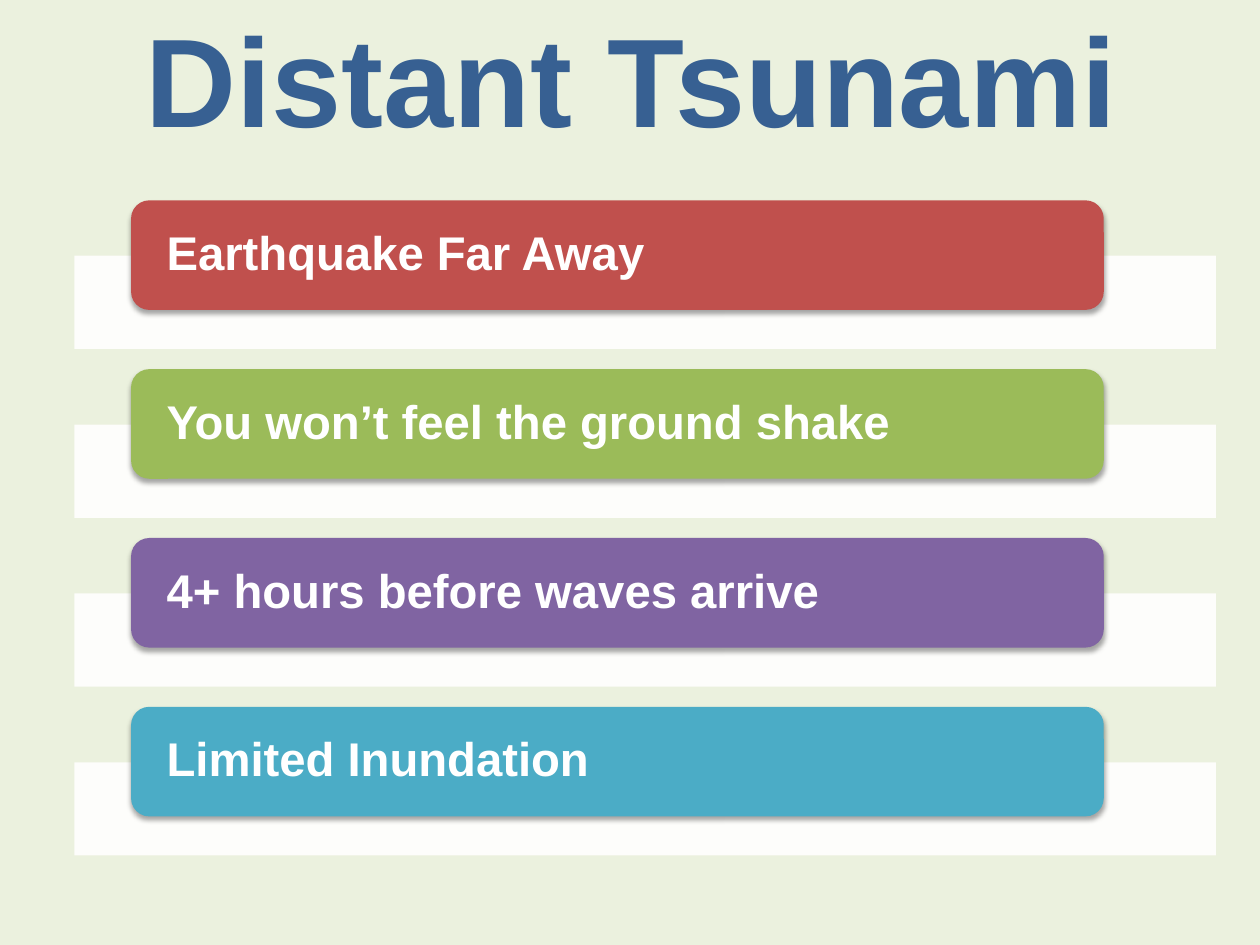
from lxml.etree import SubElement
from pptx import Presentation
from pptx.dml.color import RGBColor
from pptx.enum.shapes import MSO_SHAPE
from pptx.enum.text import MSO_ANCHOR, PP_ALIGN
from pptx.oxml.ns import qn
from pptx.util import Inches, Pt

COLORS = {
    "back": "EBF1DE", "title": "376092", "white": "FFFFFF", "shade": "000000",
    "red": "C0504D", "green": "9BBB59", "purple": "8064A2", "blue": "4BACC6",
}
FACTS = [
    ("Earthquake Far Away", "red"),
    ("You won’t feel the ground shake", "green"),
    ("4+ hours before waves arrive", "purple"),
    ("Limited Inundation", "blue"),
]


def color(name):
    return RGBColor.from_string(COLORS[name])


def set_font(para, size, name):
    font = para.font
    font.name, font.size, font.bold = "Arial", Pt(size), True
    font.color.rgb = color(name)


def set_alpha(node, percent):
    SubElement(node, qn("a:alpha"), val=str(percent * 1000))


def add_shadow(shape):
    effects = shape._element.spPr.find(qn("a:effectLst"))
    shadow = SubElement(effects, qn("a:outerShdw"), blurRad=str(Pt(3.1)),
                        dist=str(Pt(1.8)), dir="5400000", rotWithShape="0")
    set_alpha(SubElement(shadow, qn("a:srgbClr"), val=COLORS["shade"]), 35)


def add_block(slide, kind, left, top, width, height, fill):
    shape = slide.shapes.add_shape(
        kind, Inches(left), Inches(top), Inches(width), Inches(height))
    shape.fill.solid()
    shape.fill.fore_color.rgb = color(fill)
    shape.line.fill.background()
    shape.shadow.inherit = False
    return shape


def add_title(slide, left, top, width, height):
    title = slide.shapes.title
    title.left, title.top = Inches(left), Inches(top)
    title.width, title.height = Inches(width), Inches(height)
    frame = title.text_frame
    frame.text = "Distant Tsunami"
    frame.vertical_anchor = MSO_ANCHOR.MIDDLE
    para = frame.paragraphs[0]
    para.alignment = PP_ALIGN.CENTER
    set_font(para, 72, "title")


def add_fact(slide, left, top, width, text, fill):
    band = add_block(slide, MSO_SHAPE.RECTANGLE,
                     left, top + 0.44, width, 0.74, "white")
    set_alpha(band._element.spPr.find(".//" + qn("a:srgbClr")), 90)

    bar = add_block(slide, MSO_SHAPE.ROUNDED_RECTANGLE,
                    left + 0.45, top, width - 1.34, 0.87, fill)
    add_shadow(bar)
    frame = bar.text_frame
    frame.text = text
    frame.word_wrap = True
    frame.vertical_anchor = MSO_ANCHOR.MIDDLE
    frame.margin_left = frame.margin_right = Inches(0.24)
    frame.margin_top = frame.margin_bottom = 0
    para = frame.paragraphs[0]
    para.alignment = PP_ALIGN.LEFT
    para.line_spacing = 0.9
    set_font(para, 27, "white")


def add_facts(slide, left, top, width, step):
    for row, (text, fill) in enumerate(FACTS):
        add_fact(slide, left, top + row * step, width, text, fill)


def main():
    deck = Presentation()
    deck.slide_width, deck.slide_height = Inches(10), Inches(7.5)
    slide = deck.slides.add_slide(deck.slide_layouts[5])
    slide.background.fill.solid()
    slide.background.fill.fore_color.rgb = color("back")
    add_title(slide, 0.51, -0.01, 9, 1.25)
    add_facts(slide, 0.59, 1.59, 9.06, 1.34)
    deck.save("out.pptx")


if __name__ == "__main__":
    main()
